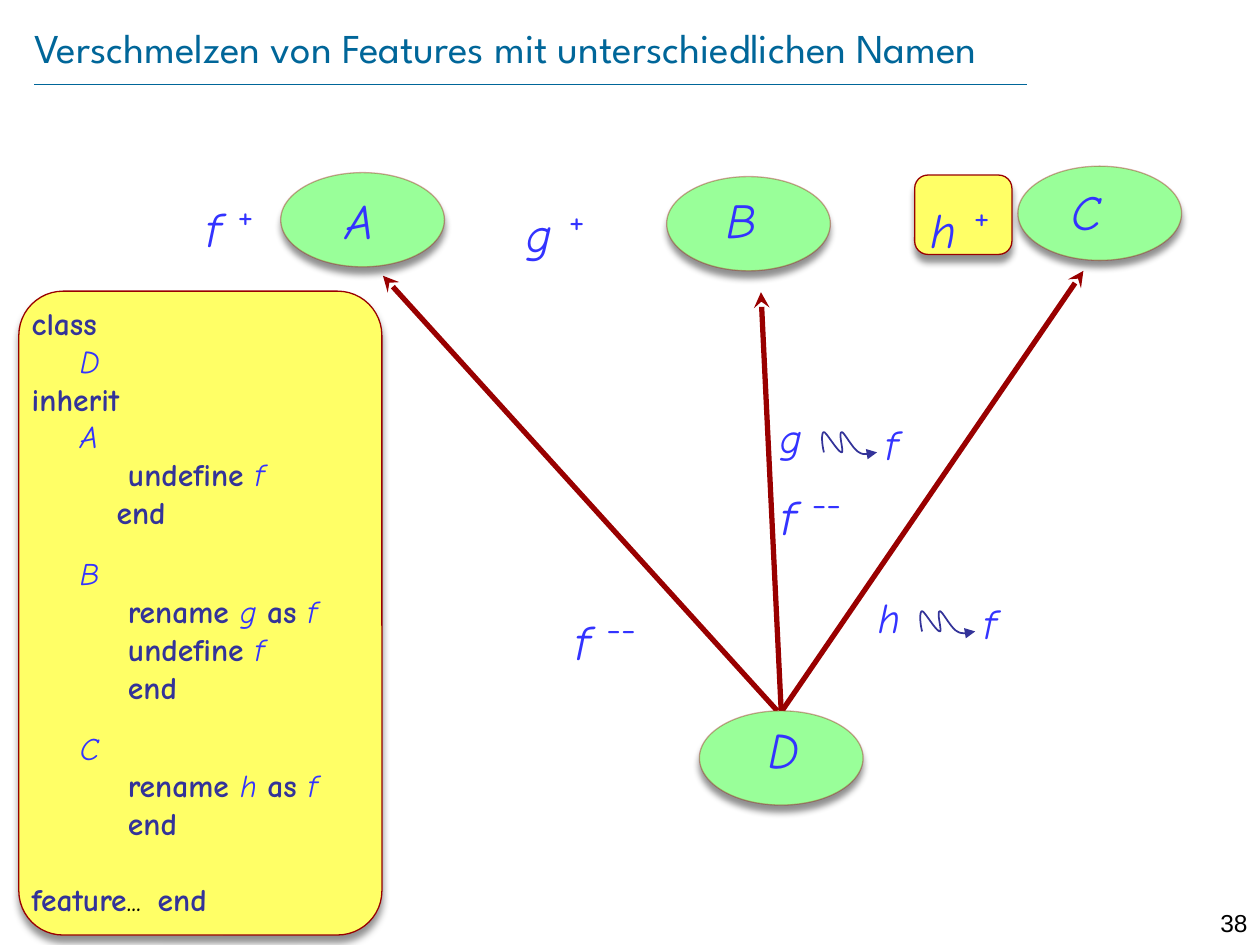
from pptx import Presentation
from pptx.dml.color import RGBColor
from pptx.enum.shapes import MSO_CONNECTOR, MSO_SHAPE
from pptx.enum.text import MSO_ANCHOR, PP_ALIGN
from pptx.oxml import parse_xml
from pptx.oxml.ns import nsdecls, qn
from pptx.util import Cm, Pt
from lxml import etree

FONT = "Comic Neue"
BLUE, NAVY, RED = "3333FF", "333399", "990000"
GREEN, YELLOW, TEAL, BLACK = "99FF99", "FFFF66", "006699", "000000"


def color(value):
    return RGBColor.from_string(value)


def add_span(para, text, size, ink, font=FONT, bold=False, italic=False, raised=False):
    span = para.add_run()
    span.text = text
    span.font.name, span.font.size = font, Pt(size)
    span.font.bold, span.font.italic = bold, italic
    span.font.color.rgb = color(ink)
    if raised:
        span._r.get_or_add_rPr().set("baseline", "30000")


def add_label(shapes, box, text, size, ink=BLUE, font=FONT, italic=True, align=PP_ALIGN.LEFT):
    frame = shapes.add_textbox(*map(Cm, box)).text_frame
    frame.word_wrap = True
    para = frame.paragraphs[0]
    para.alignment = align
    add_span(para, text, size, ink, font, italic=italic)


def set_line(shape, ink, width, head=None):
    shape.line.color.rgb = color(ink)
    shape.line.width = Pt(width)
    if head:
        etree.SubElement(shape.line._get_or_add_ln(), qn("a:tailEnd")).set("type", head)


def add_line(page, start, end, ink, width, head=None):
    line = page.shapes.add_connector(MSO_CONNECTOR.STRAIGHT, *map(Cm, start + end))
    set_line(line, ink, width, head)
    etree.SubElement(line._element.spPr, qn("a:effectLst"))


def add_panel(page, kind, box, fill=None, line_alpha=None):
    """Filled shape with red outline and soft shadow, or a bare one without fill."""
    shape = page.shapes.add_shape(kind, *map(Cm, box))
    shape.shadow.inherit = False
    if fill is None:
        shape.fill.background()
        shape.line.fill.background()
        return shape
    shape.fill.solid()
    shape.fill.fore_color.rgb = color(fill)
    set_line(shape, RED, 0.75)
    if line_alpha:
        ink = shape.line._get_or_add_ln().find(".//" + qn("a:srgbClr"))
        etree.SubElement(ink, qn("a:alpha")).set("val", str(line_alpha * 1000))
    shape._element.spPr.find(qn("a:effectLst")).append(parse_xml(
        f'<a:outerShdw {nsdecls("a")} blurRad="50800" dist="50800" dir="5400000" '
        'rotWithShape="0"><a:srgbClr val="000000"><a:alpha val="43000"/>'
        '</a:srgbClr></a:outerShdw>'))
    return shape


def add_header(page, left, top):
    title = page.shapes.title
    title.left, title.top, title.width, title.height = map(Cm, (left, top, 23.62, 1.22))
    frame = title.text_frame
    frame.margin_left = frame.margin_right = frame.margin_top = frame.margin_bottom = 0
    frame.vertical_anchor = MSO_ANCHOR.MIDDLE
    para = frame.paragraphs[0]
    para.alignment = PP_ALIGN.LEFT
    add_span(para, "Verschmelzen von Features mit unterschiedlichen Namen", 23.4, TEAL,
             "League Spartan")
    add_line(page, (left, top + 1.37), (left + 20.02, top + 1.37), TEAL, 0.25)


def add_class(page, name, left, top, text_x, text_y):
    add_panel(page, MSO_SHAPE.OVAL, (left, top, 3.3, 1.9), GREEN, line_alpha=34)
    add_label(page.shapes, (left + text_x, top + text_y, 1.6, 1.45), name, 28,
              align=PP_ALIGN.CENTER)


def add_feature(page, name, mark, left, top, width, fill=None):
    shape = add_panel(page, MSO_SHAPE.ROUNDED_RECTANGLE, (left, top, width, 1.6), fill)
    frame = shape.text_frame
    frame.word_wrap = False
    frame.vertical_anchor = MSO_ANCHOR.TOP
    para = frame.paragraphs[0]
    para.alignment = PP_ALIGN.LEFT
    add_span(para, name + " ", 28, BLUE, italic=True)
    add_span(para, mark, 36, BLUE, raised=True)


# Squiggle: a start point, then cubic curves as two controls and an end
SQUIGGLE_START = (1.14, 0.94)
SQUIGGLE_CURVES = [
    ((1.09, 0.74), (1.09, 0.53), (1.14, 0.53)),
    ((1.19, 0.53), (1.42, 0.94), (1.5, 0.94)),
    ((1.55, 0.94), (1.42, 0.53), (1.5, 0.53)),
    ((1.55, 0.53), (1.73, 0.89), (1.85, 0.94)),
    ((1.96, 1.02), (2.16, 0.94), (2.21, 0.94)),
]


def squiggle_points(steps=10):
    start = SQUIGGLE_START
    for first, second, end in SQUIGGLE_CURVES:
        for step in range(1, steps + 1):
            t = step / steps
            u = 1 - t
            yield tuple(u**3 * a + 3 * u * u * t * b + 3 * u * t * t * c + t**3 * d
                        for a, b, c, d in zip(start, first, second, end))
        start = end


def add_renaming(page, old, new, left, top):
    group = page.shapes.add_group_shape()

    def place(point):
        return Cm(left + point[0]), Cm(top + point[1])

    builder = group.shapes.build_freeform(*place(SQUIGGLE_START))
    builder.add_line_segments([place(point) for point in squiggle_points()], close=False)
    squiggle = builder.convert_to_shape()
    squiggle.shadow.inherit = False
    squiggle.fill.background()
    set_line(squiggle, NAVY, 1, "triangle")
    add_label(group.shapes, (left, top, 0.97, 1.27), old, 24)
    add_label(group.shapes, (left + 2.13, top + 0.13, 0.97, 1.27), new, 24)


# Code lines: indent in cm, space before in points, words;
# names of one letter are set in blue italics, the rest is bold
CODE = [
    (0, 0, ["class"]),
    (0.97, 0, ["D"]),
    (0, 0, ["inherit"]),
    (0.97, 0, ["A"]),
    (1.94, 0, ["undefine ", "f"]),
    (1.71, 0, ["end"]),
    (0.97, 13.3, ["B"]),
    (1.94, 0, ["rename ", "g ", "as ", "f"]),
    (1.94, 0, ["undefine ", "f"]),
    (1.94, 0, ["end"]),
    (0.97, 13.3, ["C"]),
    (1.94, 0, ["rename ", "h ", "as ", "f"]),
    (1.94, 0, ["end"]),
    (0, 21.6, ["feature", "...", "\t", "end"]),
]


def add_code(page, box):
    shape = add_panel(page, MSO_SHAPE.ROUNDED_RECTANGLE, box, YELLOW)
    shape.adjustments[0] = 0.122
    frame = shape.text_frame
    frame.margin_left = frame.margin_right = frame.margin_top = frame.margin_bottom = 0
    frame.vertical_anchor = MSO_ANCHOR.TOP
    for index, (indent, space, words) in enumerate(CODE):
        para = frame.add_paragraph() if index else frame.paragraphs[0]
        para.alignment = PP_ALIGN.LEFT
        props = para._p.get_or_add_pPr()
        props.set("marL", str(Cm(indent)))
        props.set("indent", "0")
        if space:
            para.space_before = Pt(space)
        if "\t" in words:
            tabs = etree.SubElement(props, qn("a:tabLst"))
            etree.SubElement(tabs, qn("a:tab"), pos=str(Cm(2.87)), algn="l")
        for word in words:
            name = len(word.strip()) == 1
            plain = name or word == "..."
            ink = BLUE if name else BLACK if plain else NAVY
            add_span(para, word, 18, ink, bold=not plain, italic=name)


def main():
    deck = Presentation()
    deck.slide_width, deck.slide_height = Cm(25.4), Cm(19.05)
    page = deck.slides.add_slide(deck.slide_layouts[5])
    add_header(page, 0.69, 0.33)
    # Slide number
    add_label(page.shapes, (24, 18.19, 1.4, 0.61), "38", 14, BLACK, "Arial", False,
              PP_ALIGN.RIGHT)
    # Inheritance arrows from D to its parents
    for start, end in [((15.75, 14.38), (15.34, 5.89)), ((15.67, 14.33), (7.72, 5.56)),
                       ((15.75, 14.35), (21.84, 5.46))]:
        add_line(page, start, end, RED, 3, "stealth")
    # Classes
    for row in [("A", 5.66, 3.48, 0.79, 0.23), ("B", 13.44, 3.56, 0.71, 0.13),
                ("C", 20.52, 3.35, 0.58, 0.18), ("D", 14.1, 14.33, 0.91, 0.05)]:
        add_class(page, *row)
    # Features, effective (+) or undefined (--)
    for row in [("h", "+", 18.44, 3.53, 1.96, YELLOW), ("f", "+", 3.84, 3.51, 2.11),
                ("g", "+", 10.29, 3.61, 1.93), ("f", "--", 11.28, 11.84, 2.49),
                ("f", "--", 15.42, 9.32, 2.49)]:
        add_feature(page, *row)
    add_code(page, (0.38, 5.87, 7.32, 12.98))
    # Renamings
    add_renaming(page, "h", "f", 17.45, 11.79)
    add_renaming(page, "g", "f", 15.47, 8.18)
    deck.save("out.pptx")


if __name__ == "__main__":
    main()
